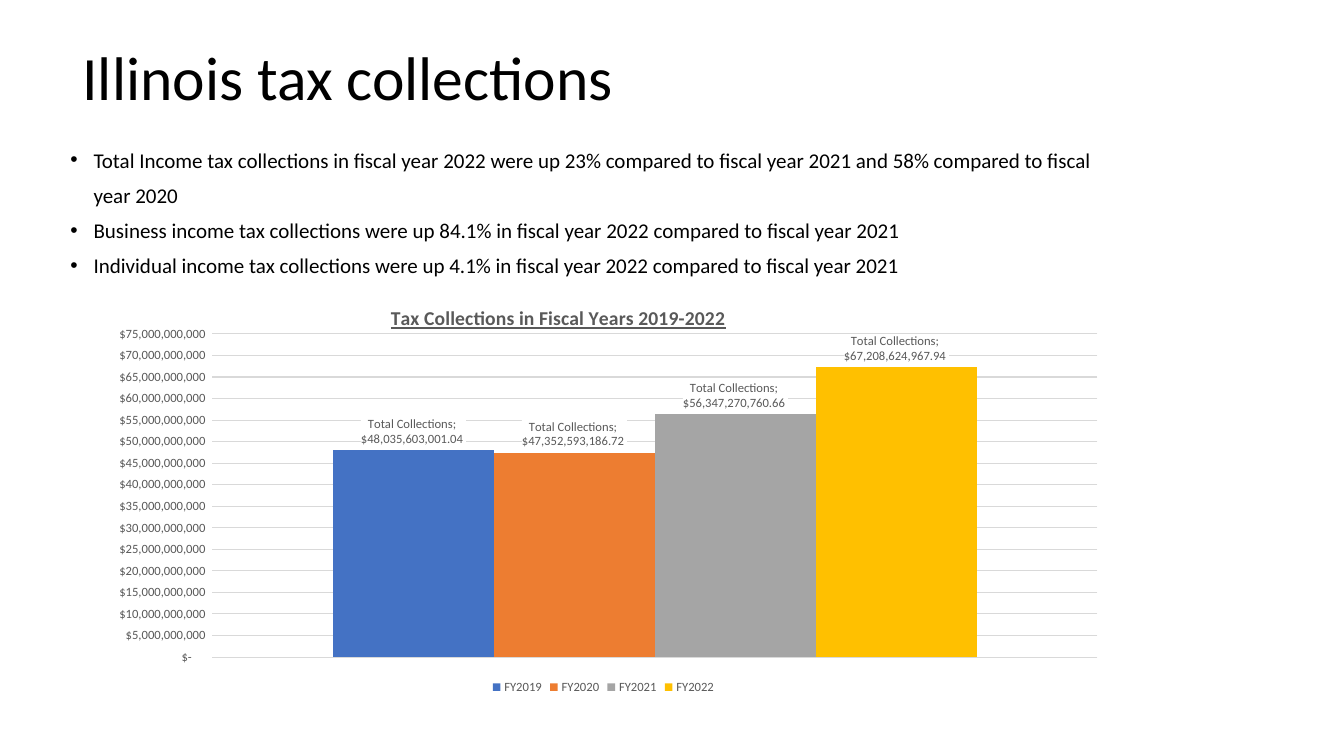
import pptx
import pptx.chart.data
import pptx.dml.color
import pptx.enum.chart
import pptx.enum.text
import pptx.oxml
import pptx.oxml.ns
import pptx.util
from pptx.util import Inches

FONT = "Calibri"
BLACK, GRAY, GRID = "000000", "595959", "D9D9D9"
DOLLARS = '_("$"* #,##0_);_("$"* \\(#,##0\\);_("$"* "-"??_);_(@_)'
CENTS = '_("$"* #,##0.00_);_("$"* \\(#,##0.00\\);_("$"* "-"??_);_(@_)'
BULLETS = [
    "Total Income tax collections in fiscal year 2022 were up 23% compared to "
    "fiscal year 2021 and 58% compared to fiscal year 2020",
    "Business income tax collections were up 84.1% in fiscal year 2022 compared to fiscal year 2021",
    "Individual income tax collections were up 4.1% in fiscal year 2022 compared to fiscal year 2021",
]
COLLECTIONS = [
    ("FY2019", 48035603001.04, "4472C4"),
    ("FY2020", 47352593186.72, "ED7D31"),
    ("FY2021", 56347270760.66, "A5A5A5"),
    ("FY2022", 67208624967.94, "FFC000"),
]


def color(value):
    return pptx.dml.color.RGBColor.from_string(value)


def style_font(font, size, hex_color):
    font.name = FONT
    font.size = pptx.util.Pt(size)
    font.color.rgb = color(hex_color)


def chart_xml(body):
    return pptx.oxml.parse_xml(body.replace(">", f' {pptx.oxml.ns.nsdecls("c", "a")}>', 1))


def set_layout(element, index, target, **fractions):
    """Place a chart part by fractions of the chart's size."""
    for old_layout in element.findall(pptx.oxml.ns.qn("c:layout")):
        element.remove(old_layout)
    modes = '<c:xMode val="edge"/><c:yMode val="edge"/>'
    values = "".join(f'<c:{key} val="{value}"/>' for key, value in fractions.items())
    element.insert(index, chart_xml(
        f"<c:layout><c:manualLayout>{target}{modes}{values}</c:manualLayout></c:layout>"))


def add_text(slide, box, lines, size, spacing, anchor, bulleted=False):
    frame = slide.shapes.add_textbox(*map(Inches, box)).text_frame
    frame.word_wrap = True
    frame.vertical_anchor = anchor
    for number, line in enumerate(lines):
        paragraph = frame.add_paragraph() if number else frame.paragraphs[0]
        paragraph.line_spacing = spacing
        run = paragraph.add_run()
        run.text = line
        style_font(run.font, size, BLACK)
        if bulleted:
            properties = paragraph._p.get_or_add_pPr()
            properties.set("marL", str(Inches(0.23)))
            properties.set("indent", str(-Inches(0.23)))
            for bullet in ('<a:buFont typeface="Arial"/>', '<a:buChar char="•"/>'):
                properties.append(chart_xml(bullet.replace("/>", f"></a:{bullet[3:].split()[0]}>")))


def add_series_labels(series):
    labels = series.data_labels
    labels.show_value = True
    labels.show_category_name = True
    labels.number_format = CENTS
    labels.number_format_is_linked = False
    labels.position = pptx.enum.chart.XL_LABEL_POSITION.OUTSIDE_END
    style_font(labels.font, 9, GRAY)
    # White backing hides the gridlines behind each label
    element = labels._element
    element.find(pptx.oxml.ns.qn("c:txPr")).addprevious(chart_xml(
        '<c:spPr><a:solidFill><a:srgbClr val="FFFFFF"/></a:solidFill></c:spPr>'))
    element.find(pptx.oxml.ns.qn("c:showBubbleSize")).addnext(
        chart_xml("<c:separator>; </c:separator>"))


def add_collections_chart(slide, box):
    data = pptx.chart.data.CategoryChartData()
    data.categories = ["Total Collections"]
    for name, amount, _ in COLLECTIONS:
        data.add_series(name, [amount])
    chart = slide.shapes.add_chart(
        pptx.enum.chart.XL_CHART_TYPE.COLUMN_CLUSTERED, *map(Inches, box), data).chart
    style_font(chart.font, 10, BLACK)

    # Title
    chart.has_title = True
    title = chart.chart_title
    run = title.text_frame.paragraphs[0].add_run()
    run.text = "Tax Collections in Fiscal Years 2019-2022"
    style_font(run.font, 14, GRAY)
    run.font.bold = True
    run.font.underline = True
    title.include_in_layout = False
    set_layout(title._element, 1, "", x=0.29, y=0.04)

    # Columns
    plot = chart.plots[0]
    plot.gap_width = 150
    plot.overlap = 0
    plot.vary_by_categories = False
    for series, (_, _, fill) in zip(plot.series, COLLECTIONS):
        series.format.fill.solid()
        series.format.fill.fore_color.rgb = color(fill)
        add_series_labels(series)
    set_layout(chart._chartSpace.chart.plotArea, 0, '<c:layoutTarget val="inner"/>',
               x=0.12, y=0.12, w=0.86, h=0.78)

    # Axes
    chart.category_axis.visible = False
    axis = chart.value_axis
    axis.minimum_scale = 0
    axis.maximum_scale = 75_000_000_000
    axis.major_unit = 5_000_000_000
    axis.major_tick_mark = pptx.enum.chart.XL_TICK_MARK.NONE
    axis.format.line.fill.background()
    axis.tick_labels.number_format = DOLLARS
    axis.tick_labels.number_format_is_linked = False
    style_font(axis.tick_labels.font, 9, GRAY)
    axis.major_gridlines.format.line.color.rgb = color(GRID)
    axis.major_gridlines.format.line.width = pptx.util.Pt(0.75)

    # Legend
    chart.has_legend = True
    chart.legend.position = pptx.enum.chart.XL_LEGEND_POSITION.BOTTOM
    chart.legend.include_in_layout = False
    style_font(chart.legend.font, 9, GRAY)


def main():
    presentation = pptx.Presentation()
    presentation.slide_width = Inches(13.33)
    presentation.slide_height = Inches(7.5)
    slide = presentation.slides.add_slide(presentation.slide_layouts[6])
    anchors = pptx.enum.text.MSO_ANCHOR
    add_text(slide, (0.72, 0.31, 11.5, 0.98), ["Illinois tax collections"], 44, 0.9, anchors.MIDDLE)
    add_collections_chart(slide, (0.88, 2.82, 10.21, 4.11))
    add_text(slide, (0.6, 1.31, 10.64, 1.51), BULLETS, 15, 1.4, anchors.TOP, bulleted=True)
    presentation.save("out.pptx")


if __name__ == "__main__":
    main()
